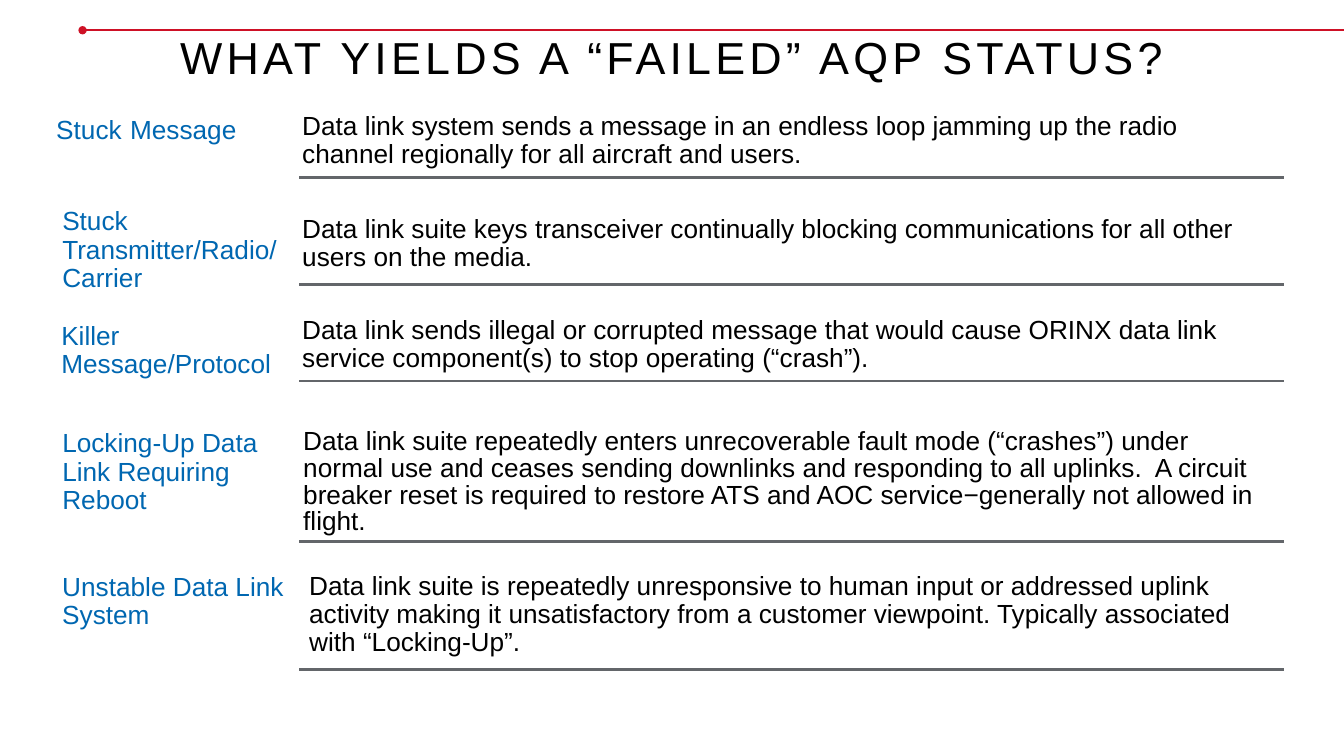
import pptx
import pptx.dml.color
import pptx.enum.shapes
import pptx.enum.text
import pptx.oxml.ns
import pptx.util
from lxml import etree

Pt = pptx.util.Pt

# Content
FONT, BLACK, BLUE, GRAY, RED = "Arial", "000000", "0067B1", "63666A", "CE1126"
BODY_SIZE, WIDE_SPACE = 18.7, 21.3
TITLE = "WHAT YIELDS A “FAILED” AQP STATUS?"
STUCK = [("Stuck", BODY_SIZE), (" ", WIDE_SPACE)]
RULE_LEFT, RULE_RIGHT = 213.8, 917.3

# Boxes are left, top, width, height; labels are paragraphs of (text, size) runs
ROWS = [
    dict(label=[STUCK + [("Message", BODY_SIZE)]],
         label_box=(33.1, 74.2, 175.7, 33.1),
         meaning="Data link system sends a message in an endless loop jamming up "
                 "the radio channel regionally for all aircraft and users.",
         meaning_box=(208.8, 73.4, 690.5, 62.6), spacing=0.9, rule=126.7),
    dict(label=[STUCK + [("Transmitter/Radio/", BODY_SIZE)], [("Carrier", BODY_SIZE)]],
         label_box=(37.4, 139, 172.1, 90),
         meaning="Data link suite keys transceiver continually blocking "
                 "communications for all other users on the media.",
         meaning_box=(208.8, 146.9, 690.5, 82.1), spacing=0.9, rule=203),
    dict(label=[[("Killer Message/Protocol", BODY_SIZE)]],
         label_box=(36.7, 223.2, 182.9, 87.8),
         meaning="Data link sends illegal or corrupted message that would cause ORINX "
                 "data link service component(s) to stop operating (“crash”).",
         meaning_box=(208.8, 218.9, 690.5, 62.6), spacing=0.9, rule=272.2),
    dict(label=[[("Locking-Up Data Link Requiring Reboot", BODY_SIZE)]],
         label_box=(37.4, 300.2, 181.4, 90),
         meaning="Data link suite repeatedly enters unrecoverable fault mode (“crashes”) "
                 "under normal use and ceases sending downlinks and responding to all "
                 "uplinks.  A circuit breaker reset is required to restore ATS and AOC "
                 "service−generally not allowed in flight.",
         meaning_box=(209.5, 299.5, 694.1, 84.2), spacing=0.85, rule=386.6),
    dict(label=[[("Unstable Data Link System", BODY_SIZE)]],
         label_box=(37.4, 402.5, 189.4, 90),
         meaning="Data link suite is repeatedly unresponsive to human input or addressed "
                 "uplink activity making it unsatisfactory from a customer viewpoint. "
                 "Typically associated with “Locking-Up”.",
         meaning_box=(213.8, 401.8, 696.2, 82.1), spacing=0.9, rule=478.1),
]


def paint(color_format, color):
    color_format.rgb = pptx.dml.color.RGBColor.from_string(color)


def add_run(paragraph, text, size, color):
    run = paragraph.add_run()
    run.text = text
    run.font.name = FONT
    run.font.size = Pt(size)
    paint(run.font.color, color)
    return run


def set_frame(frame, inset_x, inset_y, anchor):
    frame.word_wrap = True
    frame.auto_size = pptx.enum.text.MSO_AUTO_SIZE.NONE
    frame.vertical_anchor = anchor
    frame.margin_left = frame.margin_right = Pt(inset_x)
    frame.margin_top = frame.margin_bottom = Pt(inset_y)


def add_text(slide, box, paragraphs, color, spacing):
    frame = slide.shapes.add_textbox(*map(Pt, box)).text_frame
    set_frame(frame, 7.2, 7.2, pptx.enum.text.MSO_ANCHOR.TOP)
    for index, runs in enumerate(paragraphs):
        paragraph = frame.add_paragraph() if index else frame.paragraphs[0]
        paragraph.line_spacing = spacing
        for text, size in runs:
            add_run(paragraph, text, size, color)


def add_rule(slide, left, right, y, color, width):
    rule = slide.shapes.add_connector(
        pptx.enum.shapes.MSO_CONNECTOR.STRAIGHT, Pt(left), Pt(y), Pt(right), Pt(y))
    paint(rule.line.color, color)
    rule.line.width = Pt(width)
    etree.SubElement(rule._element.spPr, pptx.oxml.ns.qn("a:effectLst"))
    return rule


presentation = pptx.Presentation()
presentation.slide_width, presentation.slide_height = Pt(960), Pt(540)
slide = presentation.slides.add_slide(presentation.slide_layouts[5])

# Red line with a dot at its left end
red_line = add_rule(slide, 59, 960, 21.6, RED, 1.5)
etree.SubElement(red_line.line._get_or_add_ln(), pptx.oxml.ns.qn("a:headEnd"), type="oval")

# Title
title = slide.shapes.title
title.left, title.top, title.width, title.height = map(Pt, (0, 24.5, 960, 39.6))
set_frame(title.text_frame, 9.4, 5, pptx.enum.text.MSO_ANCHOR.MIDDLE)
heading = title.text_frame.paragraphs[0]
heading.alignment = pptx.enum.text.PP_ALIGN.CENTER
heading.line_spacing = 0.8
title_run = add_run(heading, TITLE, 32, BLACK)
title_run.font._element.set("spc", "300")

# Terms, their meanings and the rules below them
for row in ROWS:
    add_text(slide, row["label_box"], row["label"], BLUE, 0.9)
    add_text(slide, row["meaning_box"], [[(row["meaning"], BODY_SIZE)]], BLACK, row["spacing"])
    add_rule(slide, RULE_LEFT, RULE_RIGHT, row["rule"], GRAY, 2)

presentation.save("out.pptx")
